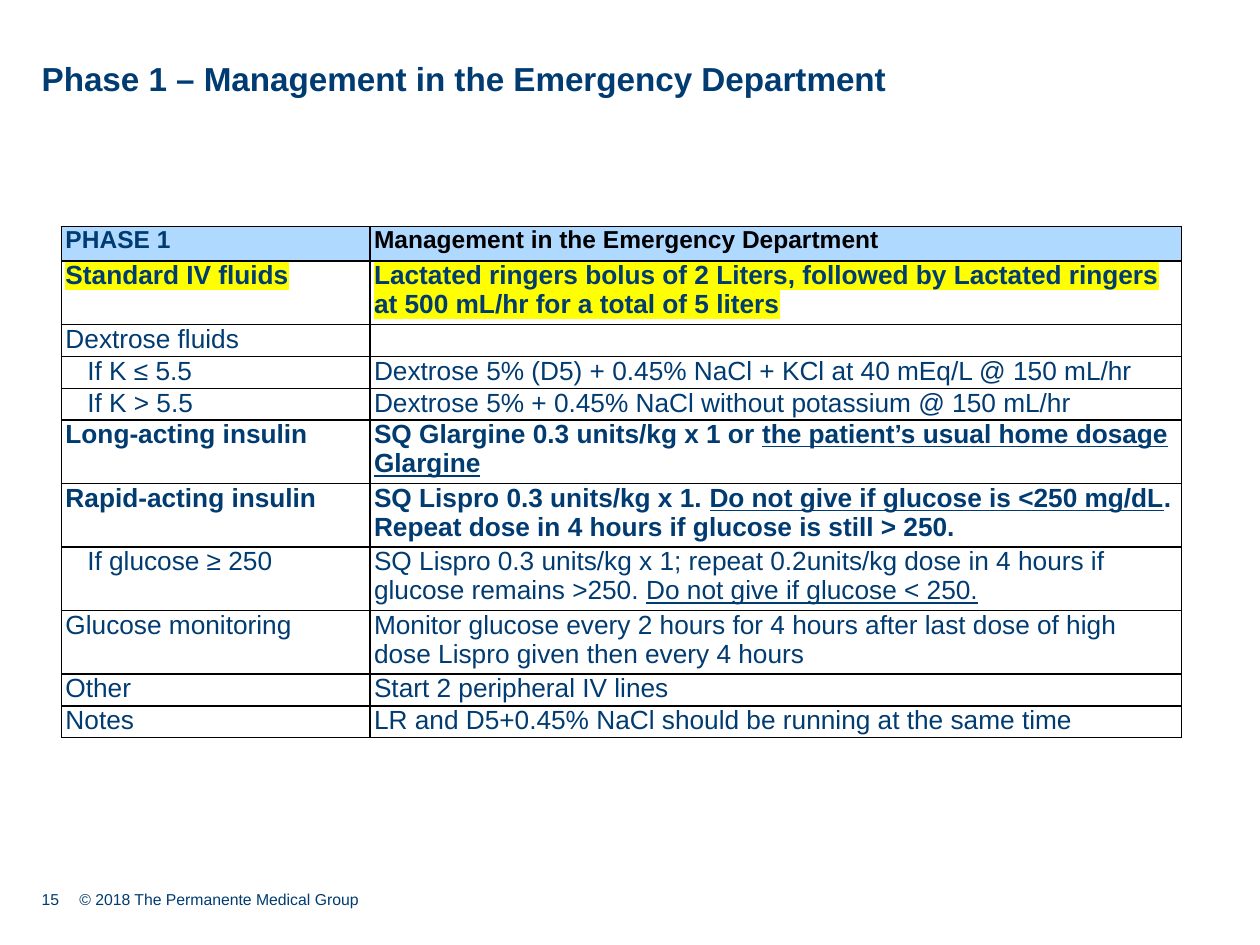
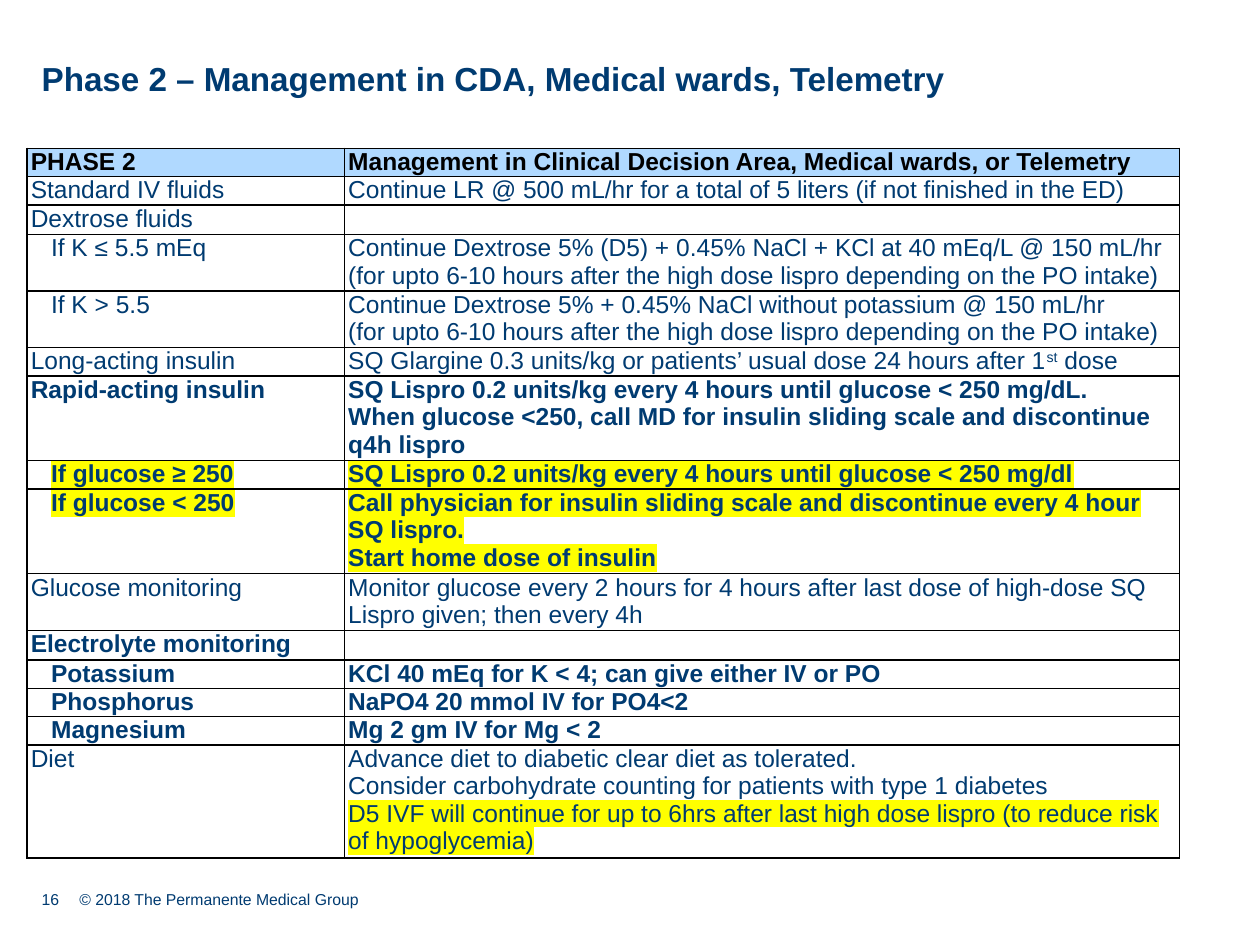
from dataclasses import dataclass

from lxml.etree import SubElement
from pptx import Presentation
from pptx.dml.color import RGBColor
from pptx.enum.text import MSO_ANCHOR, MSO_AUTO_SIZE, PP_ALIGN
from pptx.oxml import parse_xml
from pptx.oxml.ns import nsdecls, qn
from pptx.util import Cm, Pt

FONT = "Arial"
NAVY = "003B71"
BLACK = "000000"
HEADER_BLUE = "B0D9FF"
YELLOW = "FFFF00"
LEFT = 0.84
COPYRIGHT = "© 2018 The Permanente Medical Group"


@dataclass
class Span:
    text: str
    underline: bool = False
    raised: bool = False
    marked: bool = False


@dataclass
class Row:
    label: str
    paras: tuple = ()
    lines: int = 1
    indented: bool = False
    bold: bool = False
    marked: bool = False


@dataclass
class Grid:
    left: float
    top: float
    columns: tuple
    size: int
    line_height: float
    header_height: float
    indent: float


def rgb(value):
    return RGBColor.from_string(value)


def add_span(para, text, size, color=NAVY, bold=False, marked=False):
    span = para.add_run()
    span.text = text
    font = span.font
    font.size = Pt(size)
    font.bold = bold
    font.color.rgb = rgb(color)
    if marked:
        highlight = SubElement(font._element, qn("a:highlight"))
        SubElement(highlight, qn("a:srgbClr"), val=YELLOW)
    font.name = FONT
    return span


def plain_frame(shape):
    frame = shape.text_frame
    frame.auto_size = MSO_AUTO_SIZE.NONE
    frame.word_wrap = True
    frame.vertical_anchor = MSO_ANCHOR.TOP
    frame.margin_left = frame.margin_right = 0
    frame.margin_top = frame.margin_bottom = 0
    return frame


def add_label(page, text, left, width):
    box = page.shapes.add_textbox(Cm(left), Cm(17.93), Cm(width), Cm(0.64))
    add_span(plain_frame(box).paragraphs[0], text, 9)


def add_page(deck, title, number):
    page = deck.slides.add_slide(deck.slide_layouts[5])
    heading = page.shapes.title
    heading.left, heading.top = Cm(LEFT), Cm(1.3)
    heading.width, heading.height = Cm(23.75), Cm(2.1)
    para = plain_frame(heading).paragraphs[0]
    para.alignment = PP_ALIGN.LEFT
    para.line_spacing = 0.85
    add_span(para, title, 19, bold=True)
    add_label(page, str(number), LEFT, 0.64)
    add_label(page, COPYRIGHT, 1.6, 8)
    return page


def add_borders(cell):
    properties = cell._tc.get_or_add_tcPr()
    for index, side in enumerate(("lnL", "lnR", "lnT", "lnB")):
        properties.insert(index, parse_xml(
            f'<a:{side} {nsdecls("a")} w="{Pt(1)}"><a:solidFill>'
            f'<a:srgbClr val="{BLACK}"/></a:solidFill></a:{side}>'))


def format_cell(cell, fill=None):
    cell.margin_left = cell.margin_right = Cm(0.08)
    cell.margin_top = cell.margin_bottom = 0
    if fill:
        cell.fill.solid()
        cell.fill.fore_color.rgb = rgb(fill)
    else:
        cell.fill.background()
    add_borders(cell)


def write_cell(cell, paras, size, bold, marked):
    frame = cell.text_frame
    if not paras:
        SubElement(frame.paragraphs[0]._p, qn("a:endParaRPr"), sz=str(size * 100))
    for index, parts in enumerate(paras):
        para = frame.add_paragraph() if index else frame.paragraphs[0]
        for part in [parts] if isinstance(parts, (str, Span)) else parts:
            part = Span(part) if isinstance(part, str) else part
            span = add_span(para, part.text, size, NAVY, bold, marked or part.marked)
            if part.underline:
                span.font.underline = True
            if part.raised:
                span.font._element.set("baseline", "30000")


def add_phase_table(page, grid, headers, rows):
    heights = [grid.header_height] + [row.lines * grid.line_height for row in rows]
    table = page.shapes.add_table(
        len(heights), 2, Cm(grid.left), Cm(grid.top),
        Cm(sum(grid.columns)), Cm(sum(heights))).table
    table.first_row = table.horz_banding = False
    for column, width in zip(table.columns, grid.columns):
        column.width = Cm(width)
    for table_row, height in zip(table.rows, heights):
        table_row.height = Cm(height)

    for column, (text, color) in enumerate(headers):
        cell = table.cell(0, column)
        format_cell(cell, HEADER_BLUE)
        add_span(cell.text_frame.paragraphs[0], text, 14, color, bold=True)

    for index, row in enumerate(rows, 1):
        for column, paras in enumerate(((row.label,), row.paras)):
            cell = table.cell(index, column)
            format_cell(cell)
            write_cell(cell, paras, grid.size, row.bold, row.marked)
        if row.indented:
            label = table.cell(index, 0).text_frame.paragraphs[0]
            label._p.get_or_add_pPr().set("marL", str(Cm(grid.indent)))


EMERGENCY_GRID = Grid(1.24, 4.57, (6.22, 16.36), 15, 0.64, 0.69, 0.44)
EMERGENCY_HEADERS = (
    ("PHASE 1", NAVY), ("Management in the Emergency Department", BLACK))
EMERGENCY_ROWS = (
    Row("Standard IV fluids",
        ("Lactated ringers bolus of 2 Liters, followed by Lactated ringers "
         "at 500 mL/hr for a total of 5 liters",),
        lines=2, bold=True, marked=True),
    Row("Dextrose fluids"),
    Row("If K ≤ 5.5",
        ("Dextrose 5% (D5) + 0.45% NaCl + KCl at 40 mEq/L @ 150 mL/hr",),
        indented=True),
    Row("If K > 5.5",
        ("Dextrose 5% + 0.45% NaCl without potassium @ 150 mL/hr",),
        indented=True),
    Row("Long-acting insulin",
        (("SQ Glargine 0.3 units/kg x 1 or ",
          Span("the patient’s usual home dosage Glargine", underline=True)),),
        lines=2, bold=True),
    Row("Rapid-acting insulin",
        (("SQ Lispro 0.3 units/kg x 1. ",
          Span("Do not give if glucose is <250 mg/dL", underline=True),
          ". Repeat dose in 4 hours if glucose is still > 250."),),
        lines=2, bold=True),
    Row("If glucose ≥ 250",
        (("SQ Lispro 0.3 units/kg x 1; repeat 0.2units/kg dose in 4 hours "
          "if glucose remains >250. ",
          Span("Do not give if glucose < 250.", underline=True)),),
        lines=2, indented=True),
    Row("Glucose monitoring",
        ("Monitor glucose every 2 hours for 4 hours after last dose of high "
         "dose Lispro given then every 4 hours",),
        lines=2),
    Row("Other", ("Start 2 peripheral IV lines",)),
    Row("Notes", ("LR and D5+0.45% NaCl should be running at the same time",)),
)

WARD_GRID = Grid(0.54, 2.99, (6.4, 16.84), 14, 0.57, 0.57, 0.41)
WARD_HEADERS = (
    ("PHASE 2", BLACK),
    ("Management in Clinical Decision Area, Medical wards, or Telemetry", BLACK))
WARD_ROWS = (
    Row("Standard IV fluids",
        ("Continue LR @ 500 mL/hr for a total of 5 liters "
         "(if not finished in the ED)",)),
    Row("Dextrose fluids"),
    Row("If K ≤ 5.5 mEq",
        ("Continue Dextrose 5% (D5) + 0.45% NaCl + KCl at 40 mEq/L @ 150 mL/hr "
         "(for upto 6-10 hours after the high dose lispro depending on the "
         "PO intake)",),
        lines=2, indented=True),
    Row("If K > 5.5",
        ("Continue Dextrose 5% + 0.45% NaCl without potassium @ 150 mL/hr",
         "(for upto 6-10 hours after the high dose lispro depending on the "
         "PO intake)"),
        lines=2, indented=True),
    Row("Long-acting insulin",
        (("SQ Glargine 0.3 units/kg or patients’ usual dose 24 hours after 1",
          Span("st", raised=True), " dose"),)),
    Row("Rapid-acting insulin",
        ("SQ Lispro 0.2 units/kg every 4 hours until glucose < 250 mg/dL.",
         "When glucose <250, call MD for insulin sliding scale and "
         "discontinue q4h lispro"),
        lines=3, bold=True),
    Row("If glucose ≥ 250",
        ("SQ Lispro 0.2 units/kg every 4 hours until glucose < 250 mg/dl",),
        indented=True, bold=True, marked=True),
    Row("If glucose < 250",
        ("Call physician for insulin sliding scale and discontinue every "
         "4 hour SQ lispro.",
         "Start home dose of insulin"),
        lines=3, indented=True, bold=True, marked=True),
    Row("Glucose monitoring",
        ("Monitor glucose every 2 hours for 4 hours after last dose of "
         "high-dose SQ Lispro given; then every 4h",),
        lines=2),
    Row("Electrolyte monitoring", bold=True),
    Row("Potassium", ("KCl 40 mEq for K < 4; can give either IV or PO",),
        indented=True, bold=True),
    Row("Phosphorus", ("NaPO4 20 mmol IV for PO4<2",), indented=True, bold=True),
    Row("Magnesium", ("Mg 2 gm IV for Mg < 2",), indented=True, bold=True),
    Row("Diet",
        ("Advance diet to diabetic clear diet as tolerated.",
         "Consider carbohydrate counting for patients with type 1 diabetes",
         Span("D5 IVF will continue for up to 6hrs after last high dose lispro "
              "(to reduce risk of hypoglycemia)", marked=True)),
        lines=4),
)


def main():
    deck = Presentation()
    deck.slide_width, deck.slide_height = Cm(25.4), Cm(19.05)
    page = add_page(deck, "Phase 1 – Management in the Emergency Department", 15)
    add_phase_table(page, EMERGENCY_GRID, EMERGENCY_HEADERS, EMERGENCY_ROWS)
    page = add_page(deck, "Phase 2 – Management in CDA, Medical wards, Telemetry", 16)
    add_phase_table(page, WARD_GRID, WARD_HEADERS, WARD_ROWS)
    deck.save("out.pptx")


if __name__ == "__main__":
    main()
